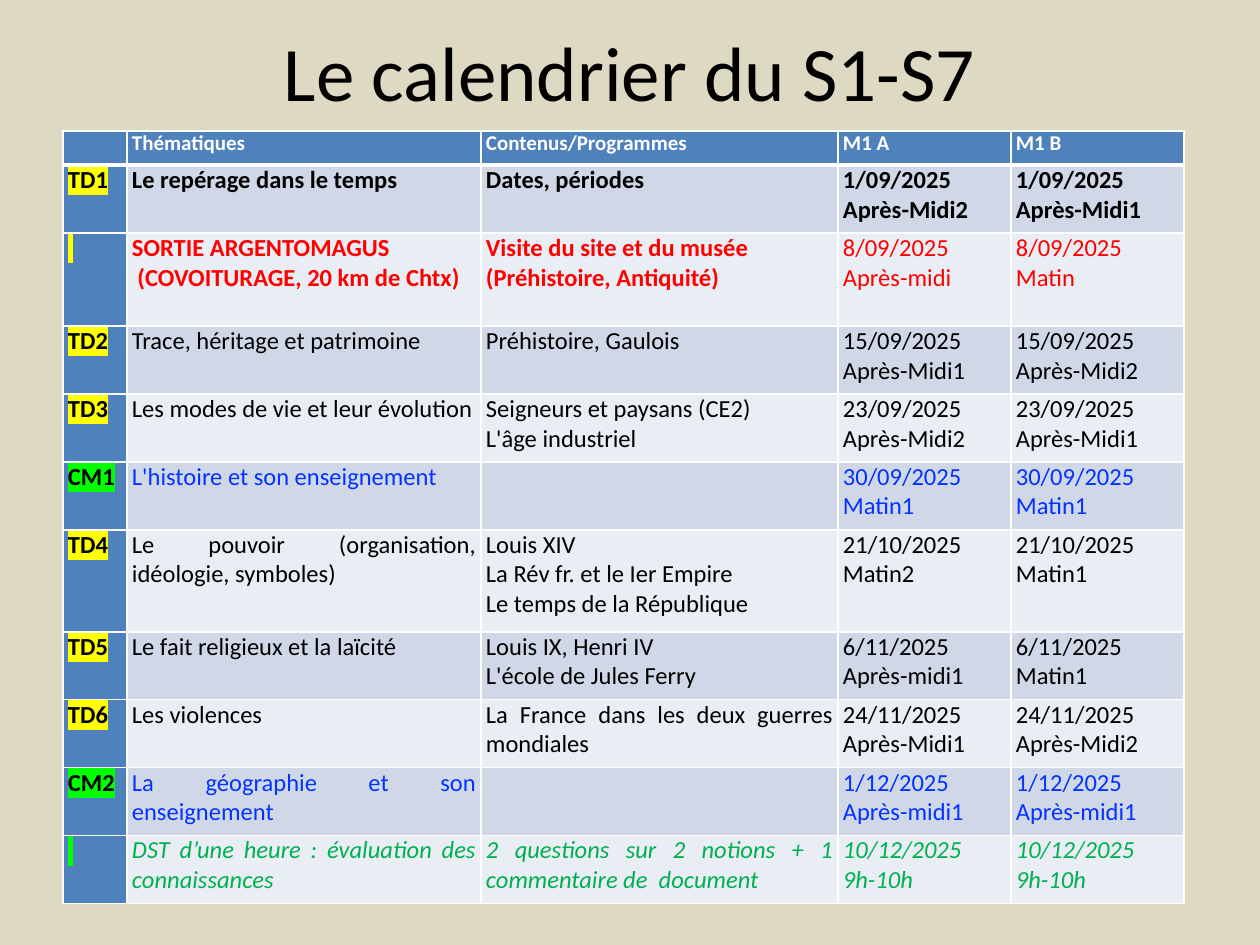
import pptx
import pptx.util
import pptx.dml.color
import pptx.enum.text
import pptx.oxml.ns
from lxml import etree

RGB = pptx.dml.color.RGBColor
SAND = RGB(0xDD, 0xD9, 0xC3)
BLACK = RGB(0, 0, 0)
WHITE = RGB(255, 255, 255)
STEEL = RGB(0x4F, 0x81, 0xBD)
BANDS = RGB(0xD0, 0xD8, 0xE8), RGB(0xE9, 0xED, 0xF4)
RED = RGB(255, 0, 0)
BLUE = RGB(0x04, 0x32, 0xFF)
GREEN = RGB(0x00, 0xB0, 0x50)
YELLOW = RGB(255, 255, 0)
LIME = RGB(0, 255, 0)

FONT = "Calibri"
ALIGN = pptx.enum.text.PP_ALIGN
COLS = 64, 354, 357, 173, 173
HEAD = "", "Thématiques", "Contenus/Programmes", "M1 A", "M1 B"

# height, colour, bold columns, italic, mark, texts
ROWS = [
    (68, BLACK, 5, False, YELLOW,
     ("TD1", "Le repérage dans le temps", "Dates, périodes",
      "1/09/2025\nAprès-Midi2", "1/09/2025\nAprès-Midi1")),
    (93, RED, 3, False, YELLOW,
     (" ", "SORTIE ARGENTOMAGUS\n (COVOITURAGE, 20 km de Chtx)",
      "Visite du site et du musée\n(Préhistoire, Antiquité)",
      "8/09/2025\nAprès-midi", "8/09/2025\nMatin")),
    (68, BLACK, 1, False, YELLOW,
     ("TD2", "Trace, héritage et patrimoine", "Préhistoire, Gaulois",
      "15/09/2025\nAprès-Midi1", "15/09/2025\nAprès-Midi2")),
    (68, BLACK, 1, False, YELLOW,
     ("TD3", "Les modes de vie et leur évolution",
      "Seigneurs et paysans (CE2)\nL'âge industriel",
      "23/09/2025\nAprès-Midi2", "23/09/2025\nAprès-Midi1")),
    (68, BLUE, 1, False, LIME,
     ("CM1", "L'histoire et son enseignement", "",
      "30/09/2025\nMatin1", "30/09/2025\nMatin1")),
    (102, BLACK, 1, False, YELLOW,
     ("TD4", "Le pouvoir (organisation, idéologie, symboles)",
      "Louis XIV\nLa Rév fr. et le Ier Empire\nLe temps de la République",
      "21/10/2025\nMatin2", "21/10/2025\nMatin1")),
    (68, BLACK, 1, False, YELLOW,
     ("TD5", "Le fait religieux et la laïcité",
      "Louis IX, Henri IV\nL'école de Jules Ferry",
      "6/11/2025\nAprès-midi1", "6/11/2025\nMatin1")),
    (68, BLACK, 1, False, YELLOW,
     ("TD6", "Les violences", "La France dans les deux guerres mondiales",
      "24/11/2025\nAprès-Midi1", "24/11/2025\nAprès-Midi2")),
    (68, BLUE, 1, False, LIME,
     ("CM2", "La géographie et son enseignement", "",
      "1/12/2025\nAprès-midi1", "1/12/2025\nAprès-midi1")),
    (68, GREEN, 0, True, LIME,
     (" ", "DST d’une heure : évaluation des connaissances",
      "2 questions sur 2 notions + 1 commentaire de  document",
      "10/12/2025\n9h-10h", "10/12/2025\n9h-10h")),
]


def px(n):
    return pptx.util.Emu(round(n * 914400 / 126))


def add(node, tag, **attrs):
    return etree.SubElement(node, pptx.oxml.ns.qn(tag), attrs)


def style(frame, size, color, align, bold=False, italic=False, mark=None):
    for para in frame.paragraphs:
        para.alignment = align
        for run in para.runs:
            font = run.font
            font.size = pptx.util.Pt(size)
            font.bold, font.italic = bold, italic
            font.color.rgb = color
            if mark is not None:
                glow = add(run._r.get_or_add_rPr(), "a:highlight")
                add(glow, "a:srgbClr", val=str(mark))
            font.name = FONT
        if not para.runs:
            add(para._p, "a:endParaRPr", sz=str(size * 100))


def edge(cell, top, base):
    """Draw white borders, with the given top and bottom widths in points."""
    props = cell._tc.get_or_add_tcPr()
    for side, width in zip("LRTB", (1, 1, top, base)):
        line = add(props, "a:ln" + side, w=str(pptx.util.Pt(width)))
        add(add(line, "a:solidFill"), "a:srgbClr", val=str(WHITE))


def fill(cell, text, color, top=1, base=1):
    cell.text_frame.text = text
    cell.margin_left = cell.margin_right = px(5)
    cell.margin_top = cell.margin_bottom = 0
    edge(cell, top, base)
    cell.fill.solid()
    cell.fill.fore_color.rgb = color


def title(slide, x, y, w, h):
    frame = slide.shapes.add_textbox(px(x), px(y), px(w), px(h)).text_frame
    frame.word_wrap = True
    frame.vertical_anchor = pptx.enum.text.MSO_ANCHOR.MIDDLE
    frame.text = "Le calendrier du S1-S7"
    style(frame, 44, BLACK, ALIGN.CENTER)


def plan(slide, x, y, top):
    """Place the calendar at x, y, with a header row of height top."""
    tall = [top] + [row[0] for row in ROWS]
    table = slide.shapes.add_table(len(tall), len(COLS), px(x), px(y),
                                   px(sum(COLS)), px(sum(tall))).table
    table.first_row = table.horz_banding = False
    for col, width in zip(table.columns, COLS):
        col.width = px(width)
    for row, height in zip(table.rows, tall):
        row.height = px(height)
    for c, text in enumerate(HEAD):
        cell = table.cell(0, c)
        fill(cell, text, STEEL, base=3)
        style(cell.text_frame, 12, WHITE, ALIGN.JUSTIFY, bold=True)
    for r, (_, ink, bold, italic, mark, texts) in enumerate(ROWS, 1):
        for c, text in enumerate(texts):
            cell = table.cell(r, c)
            key = c == 0
            fill(cell, text, STEEL if key else BANDS[(r - 1) % 2],
                 top=3 if r == 1 else 1)
            style(cell.text_frame, 14, BLACK if key else ink, ALIGN.JUSTIFY,
                  c < bold, italic and not key, mark if key else None)


def main():
    deck = pptx.Presentation()
    deck.slide_width, deck.slide_height = px(1260), px(945)
    slide = deck.slides.add_slide(deck.slide_layouts[6])
    slide.background.fill.solid()
    slide.background.fill.fore_color.rgb = SAND
    title(slide, 63, 0, 1134, 141)
    plan(slide, 63, 131, 34)
    deck.save("out.pptx")


if __name__ == "__main__":
    main()
